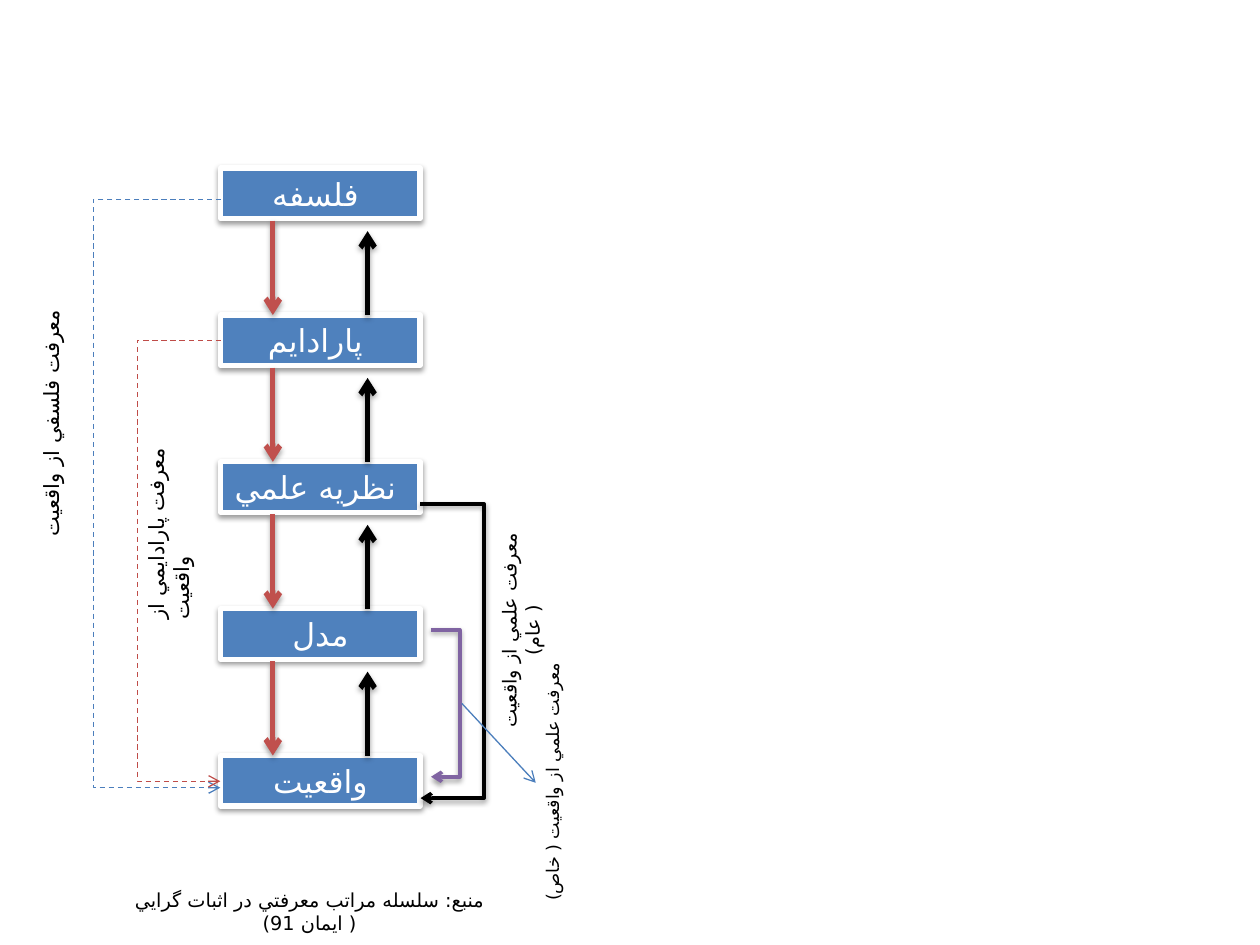
from lxml import etree
from pptx import Presentation
from pptx.dml.color import RGBColor
from pptx.enum import dml, shapes, text
from pptx.oxml import ns
from pptx.util import Cm, Pt

COLORS = {
    "box": "4F81BD", "white": "FFFFFF", "black": "000000", "red": "C0504D",
    "blue_line": "4B7EBC", "red_line": "BF4C48", "purple": "8064A2",
}
LATIN_FONT, ARABIC_FONT = "Calibri", "DejaVu Sans"

# Levels of knowledge, top to bottom
LEVELS = ["فلسفه ", "پارادايم ", "نظريه علمي ", "مدل", "واقعيت"]
BOX_LEFT, BOX_TOP, BOX_WIDTH, BOX_HEIGHT, BOX_STEP = 4.45, 3.39, 4.02, 1.02, 2.96
DOWN_X, DOWN_GAP = 5.5, 1.06
UP_X, UP_GAP = 7.41, 1.27

# start x, start y, end y, lane x, color, width, dashed, shadow
BYPASSES = [
    (4.44, 4.02, 15.88, 1.87, "blue_line", 0.75, True, False),
    (4.44, 6.86, 15.75, 2.76, "red_line", 0.75, True, False),
    (8.47, 10.16, 16.09, 9.76, "black", 2, False, True),
    (8.68, 12.7, 15.66, 9.27, "purple", 2, False, True),
]
BYPASS_WIDTH = 0.01
POINTER = (9.31, 14.18, 10.8, 15.78)

# words, left, top, width, height, rotation, size, centered, right to left
LABELS = [
    ("معرفت علمي از واقعيت ( عام)", 7.52, 12.34, 5.51, 0.74, 270, 11, True, True),
    ("معرفت علمي از واقعيت ( خاص)", 8.28, 15.42, 5.72, 0.69, 270, 10, True, True),
    ("معرفت فلسفي از واقعيت ", -1.73, 8.08, 5.51, 0.76, 270, 12, True, False),
    ("معرفت پارادايمي از واقعيت", 0.89, 10.11, 4.5, 0.76, 270, 12, False, False),
    ("منبع: سلسله مراتب معرفتي در اثبات گرايي ( ايمان 91)",
     2.11, 17.78, 8.26, 0.74, 0, 11, True, True),
]


def color(name):
    return RGBColor.from_string(COLORS[name])


def add_child(parent, tag, **attributes):
    return etree.SubElement(parent, ns.qn(tag), attributes)


def set_effects(shape, shadow, opacity=38, distance=1.6):
    """Give the shape a soft shadow below it, or an empty effect list."""
    effects = add_child(shape._element.spPr, "a:effectLst")
    if shadow:
        outer = add_child(effects, "a:outerShdw", blurRad=str(Pt(3.1)),
                          dist=str(Pt(distance)), dir="5400000", rotWithShape="0")
        black = add_child(outer, "a:srgbClr", val=COLORS["black"])
        add_child(black, "a:alpha", val=str(opacity * 1000))


def write(shape, words, size, color_name, centered=True, right_to_left=False):
    frame = shape.text_frame
    frame.word_wrap = True
    frame.auto_size = text.MSO_AUTO_SIZE.SHAPE_TO_FIT_TEXT
    paragraph = frame.paragraphs[0]
    paragraph.alignment = text.PP_ALIGN.CENTER if centered else text.PP_ALIGN.LEFT
    if right_to_left:
        paragraph._p.get_or_add_pPr().set("rtl", "1")
    run = paragraph.add_run()
    run.text = words
    for name, value in {"name": LATIN_FONT, "size": Pt(size)}.items():
        setattr(run.font, name, value)
    run.font.color.rgb = color(color_name)
    add_child(run._r.get_or_add_rPr(), "a:cs", typeface=ARABIC_FONT)


def add_arrow(slide, kind, points, color_name, width, dashed=False):
    arrow = slide.shapes.add_connector(kind, *map(Cm, points))
    arrow.line.color.rgb = color(color_name)
    arrow.line.width = Pt(width)
    if dashed:
        arrow.line.dash_style = dml.MSO_LINE.DASH
    add_child(arrow.line._get_or_add_ln(), "a:tailEnd", type="arrow")
    return arrow


def add_level(slide, words, top):
    box = slide.shapes.add_shape(
        shapes.MSO_SHAPE.RECTANGLE,
        *map(Cm, (BOX_LEFT, top, BOX_WIDTH, BOX_HEIGHT)))
    box.fill.solid()
    box.fill.fore_color.rgb = color("box")
    box.line.color.rgb = color("white")
    box.line.width = Pt(3)
    set_effects(box, True)
    write(box, words, 18, "white")


def add_bypass(slide, x, start, end, lane, color_name, width, dashed, shadow):
    """Draw an elbow arrow that leaves x, runs down the lane and comes back."""
    points = (x, start, x + BYPASS_WIDTH, end)
    arrow = add_arrow(slide, shapes.MSO_CONNECTOR.ELBOW, points, color_name, width, dashed)
    properties = arrow._element.spPr
    if lane < x:
        transform = properties.find(ns.qn("a:xfrm"))
        transform.set("rot", "10800000")
        transform.set("flipV", "1")
    geometry = properties.find(ns.qn("a:prstGeom"))
    adjustments = geometry.find(ns.qn("a:avLst"))
    if adjustments is None:
        adjustments = add_child(geometry, "a:avLst")
    ratio = round(abs(lane - x) / BYPASS_WIDTH * 100000)
    add_child(adjustments, "a:gd", name="adj1", fmla=f"val {ratio}")
    set_effects(arrow, shadow)


def add_label(slide, words, left, top, width, height, rotation, size, centered, right_to_left):
    label = slide.shapes.add_textbox(*map(Cm, (left, top, width, height)))
    label.rotation = rotation
    write(label, words, size, "black", centered, right_to_left)


def main():
    presentation = Presentation()
    presentation.slide_width, presentation.slide_height = Cm(25.4), Cm(19.05)
    slide = presentation.slides.add_slide(presentation.slide_layouts[6])

    tops = [BOX_TOP + BOX_STEP * index for index in range(len(LEVELS))]
    for words, top in reversed(list(zip(LEVELS, tops))):
        add_level(slide, words, top)

    pairs = list(zip(tops, tops[1:]))
    steps = [((DOWN_X, upper + DOWN_GAP, DOWN_X, lower), "red") for upper, lower in pairs]
    steps += [((UP_X, lower, UP_X, upper + UP_GAP), "black") for upper, lower in pairs]
    for points, color_name in steps:
        arrow = add_arrow(slide, shapes.MSO_CONNECTOR.STRAIGHT, points, color_name, 3)
        set_effects(arrow, True, opacity=35, distance=1.8)

    for bypass in BYPASSES:
        add_bypass(slide, *bypass)
    for label in LABELS:
        add_label(slide, *label)
    pointer = add_arrow(slide, shapes.MSO_CONNECTOR.STRAIGHT, POINTER, "blue_line", 0.75)
    set_effects(pointer, False)

    presentation.save("out.pptx")


if __name__ == "__main__":
    main()
